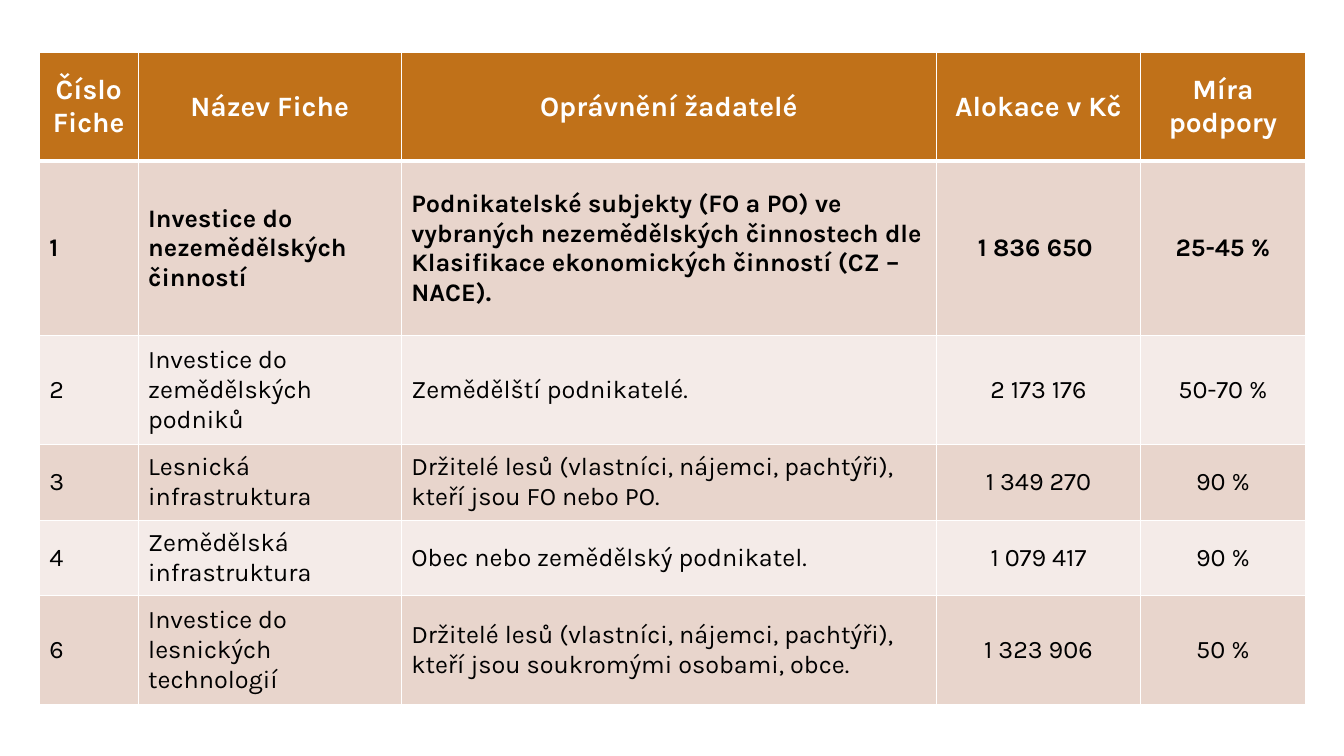
from lxml import etree
from pptx import Presentation
from pptx.dml.color import RGBColor
from pptx.enum.text import MSO_ANCHOR, PP_ALIGN
from pptx.oxml.ns import qn
from pptx.util import Inches, Pt

MIDDLE = MSO_ANCHOR.MIDDLE
LEFT, CENTER = PP_ALIGN.LEFT, PP_ALIGN.CENTER

HEAD, DARK, LIGHT = "C07119", "E8D5CC", "F4EBE8"
WHITE, BLACK = "FFFFFF", "000000"

COLS = [0.98, 2.61, 5.31, 2.02, 1.64]
ROWS = [1.08, 1.73, 1.08, 0.75, 0.75, 1.08]
ALIGN = [LEFT, LEFT, LEFT, CENTER, CENTER]

FICHES = [
    ["Číslo Fiche", "Název Fiche", "Oprávnění žadatelé", "Alokace v Kč", "Míra podpory"],
    ["1", "Investice do nezemědělských činností",
     "Podnikatelské subjekty (FO a PO) ve vybraných nezemědělských činnostech dle "
     "Klasifikace ekonomických činností (CZ – NACE).", "1 836 650 ", "25-45 %"],
    ["2", "Investice do zemědělských podniků", "Zemědělští podnikatelé.",
     "2 173 176", "50-70 %"],
    ["3", "Lesnická infrastruktura",
     "Držitelé lesů (vlastníci, nájemci, pachtýři), kteří jsou FO nebo PO.",
     "1 349 270", "90 %"],
    ["4", "Zemědělská infrastruktura", "Obec nebo zemědělský podnikatel.",
     "1 079 417", "90 %"],
    ["6", "Investice do lesnických technologií",
     "Držitelé lesů (vlastníci, nájemci, pachtýři), kteří jsou soukromými osobami, obce.",
     "1 323 906", "50 %"],
]


def color(code):
    return RGBColor.from_string(code)


class Deck:
    font = "Karla"

    def __init__(self, slide):
        self.slide = slide

    def border(self, cell, bottom):
        """Draw white edges; they must come before the fill in the cell."""
        props = cell._tc.get_or_add_tcPr()
        edges = {"lnL": 1, "lnR": 1, "lnT": 1, "lnB": bottom}
        for spot, (tag, width) in enumerate(edges.items()):
            line = etree.Element(qn("a:" + tag), w=str(Pt(width)))
            fill = etree.SubElement(line, qn("a:solidFill"))
            etree.SubElement(fill, qn("a:srgbClr"), val=WHITE)
            props.insert(spot, line)

    def cell(self, cell, text, fill, ink, size, bold, align, bottom=1):
        cell.fill.solid()
        cell.fill.fore_color.rgb = color(fill)
        cell.vertical_anchor = MIDDLE
        self.border(cell, bottom)
        para = cell.text_frame.paragraphs[0]
        para.alignment = align
        run = para.add_run()
        run.text = text
        run.font.name = self.font
        run.font.size = Pt(size)
        run.font.bold = bold
        run.font.color.rgb = color(ink)

    def table(self, left, top, cols, rows):
        frame = self.slide.shapes.add_table(
            len(rows), len(cols), Inches(left), Inches(top),
            Inches(sum(cols)), Inches(sum(rows)))
        grid = frame.table
        for col, width in zip(grid.columns, cols):
            col.width = Inches(width)
        for row, height in zip(grid.rows, rows):
            row.height = Inches(height)
        return grid


def main():
    prs = Presentation()
    prs.slide_width, prs.slide_height = Inches(13.33), Inches(7.5)
    deck = Deck(prs.slides.add_slide(prs.slide_layouts[6]))
    grid = deck.table(0.39, 0.52, COLS, ROWS)

    # Header row
    for c, text in enumerate(FICHES[0]):
        deck.cell(grid.cell(0, c), text, HEAD, WHITE, 20, True, CENTER, bottom=3)

    # Fiche rows in alternating bands, the first one in bold
    for r, fiche in enumerate(FICHES[1:], 1):
        band = DARK if r % 2 else LIGHT
        for c, text in enumerate(fiche):
            deck.cell(grid.cell(r, c), text, band, BLACK, 18, r == 1, ALIGN[c])

    # The first fiche row shares the thick edge below the header
    for c in range(len(COLS)):
        edge = grid.cell(1, c)._tc.tcPr.find(qn("a:lnT"))
        edge.set("w", str(Pt(3)))

    prs.save("out.pptx")


if __name__ == "__main__":
    main()
